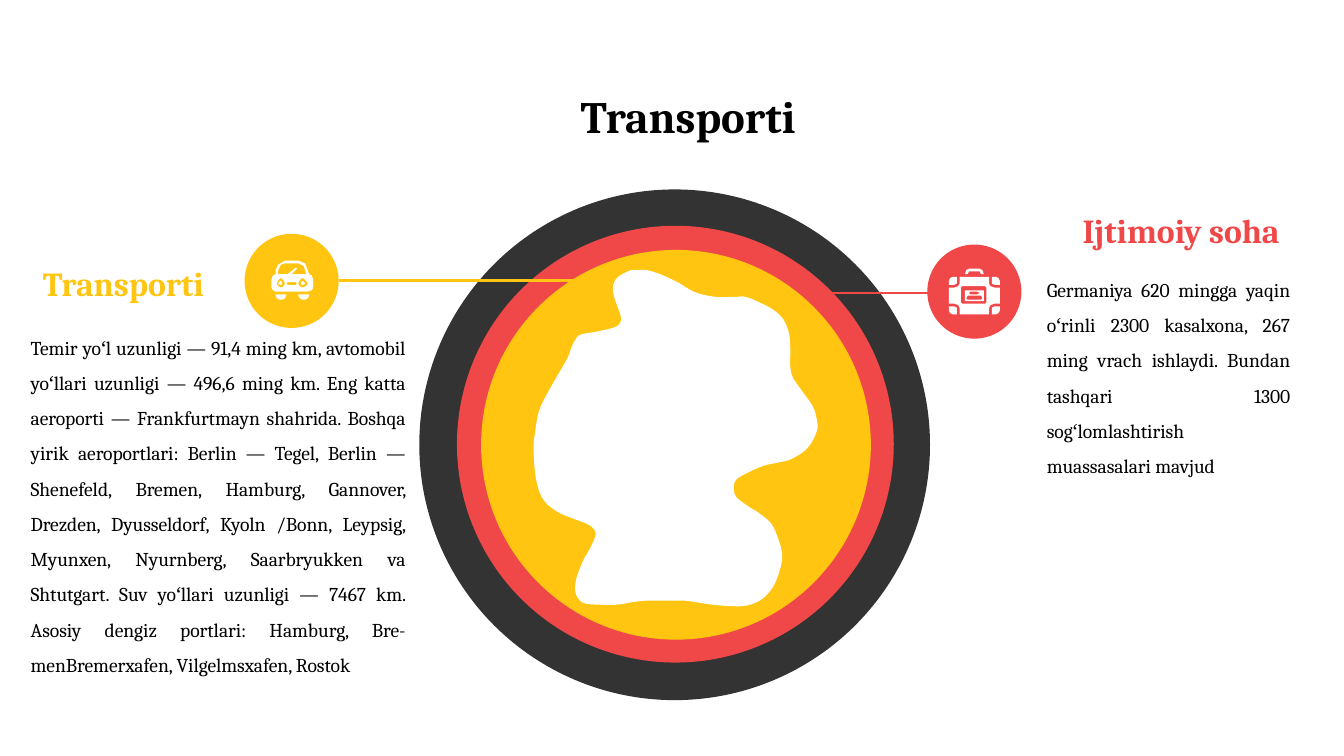
from dataclasses import dataclass

from lxml import etree
from pptx import Presentation
from pptx.dml.color import RGBColor
from pptx.enum.shapes import MSO_CONNECTOR, MSO_SHAPE
from pptx.enum.text import MSO_ANCHOR, PP_ALIGN
from pptx.oxml.ns import qn
from pptx.util import Emu, Pt

EMU_PER_PX = 9144
SLIDE_WIDTH = 1000
FONT = "Cambria"
BLACK = RGBColor(0x00, 0x00, 0x00)
WHITE = RGBColor(0xFF, 0xFF, 0xFF)
CHARCOAL = RGBColor(0x33, 0x33, 0x33)
RED = RGBColor(0xF0, 0x48, 0x48)
YELLOW = RGBColor(0xFF, 0xC5, 0x11)
ELLIPSE = MSO_SHAPE.OVAL
STRAIGHT = MSO_CONNECTOR.STRAIGHT
TOP, MIDDLE = MSO_ANCHOR.TOP, MSO_ANCHOR.MIDDLE
LEFT, CENTER = PP_ALIGN.LEFT, PP_ALIGN.CENTER
RIGHT, JUSTIFY = PP_ALIGN.RIGHT, PP_ALIGN.JUSTIFY

Point = tuple[float, float]
Contour = list[Point]


@dataclass(frozen=True)
class Disc:
    left: int
    top: int
    diameter: int
    color: RGBColor


@dataclass(frozen=True)
class Leader:
    start: int
    end: int
    y: int
    color: RGBColor


@dataclass(frozen=True)
class Label:
    text: str
    left: int
    top: int
    width: int
    height: int
    size: float
    color: RGBColor = BLACK
    bold: bool = False
    align: PP_ALIGN = JUSTIFY
    anchor: MSO_ANCHOR = TOP
    spacing: float = 1.0


DISCS = [
    Disc(312, 141, 380, CHARCOAL),
    Disc(340, 168, 325, RED),
    Disc(358, 186, 290, YELLOW),
    Disc(690, 182, 70, RED),
    Disc(182, 174, 70, YELLOW),
]
LEADERS = [Leader(610, 693, 218, RED), Leader(252, 430, 209, YELLOW)]
LABELS = [
    Label("Transporti", 62, 56, 900, 63, 24, bold=True, align=CENTER),
    Label("Germaniya 620 mingga yaqin oʻrinli 2300 kasalxona, 267 ming vrach "
          "ishlaydi. Bundan tashqari 1300 sogʻlomlashtirish muassasalari mavjud",
          769, 188, 201, 196, 10.5, spacing=1.5),
    Label("Ijtimoiy soha", 754, 156, 208, 31, 18, RED, True, RIGHT, MIDDLE),
    Label("Temir yoʻl uzunligi — 91,4 ming km, avtomobil yoʻllari uzunligi — "
          "496,6 ming km. Eng katta aeroporti — Frankfurtmayn shahrida. Boshqa "
          "yirik aeroportlari: Berlin — Tegel, Berlin — Shenefeld, Bremen, "
          "Hamburg, Gannover, Drezden, Dyusseldorf, Kyoln /Bonn, Leypsig, "
          "Myunxen, Nyurnberg, Saarbryukken va Shtutgart. Suv yoʻllari uzunligi "
          "— 7467 km. Asosiy dengiz portlari: Hamburg, Bre-menBremerxafen, "
          "Vilgelmsxafen, Rostok",
          13, 231, 299, 314, 10.5, spacing=1.5),
    Label("Transporti", 22, 195, 162, 31, 18, YELLOW, True, LEFT, MIDDLE),
]

CASE_CENTER = (725, 220)
CASE_CORNER = [(709, 206), (712, 206), (712, 211), (710, 212),
               (706, 212), (706, 209), (707, 207)]
CASE_NOTCH = [(706, 214), (710, 214), (713, 213), (714, 211), (714, 206)]
CASE_WINDOW = [(716, 213), (733, 213), (734, 214), (734, 225),
               (733, 226), (716, 226), (715, 225), (715, 214)]
CASE_TAG = [
    [(718, 216), (732, 216), (732, 224), (718, 224)],
    [(722, 217), (727, 217), (729, 218), (727, 219), (722, 219), (721, 218)],
    [(720, 220), (730, 220), (731, 222), (730, 223), (720, 223), (719, 222)],
]
CASE_HANDLE = [(721, 200), (729, 200), (731, 201), (732, 204), (730, 204),
               (729, 202), (721, 202), (720, 204), (718, 204), (719, 201)]

CAR_BODY = [(212, 194), (222, 194), (227, 196), (229, 201), (230, 204), (232, 205),
            (233, 208), (233, 214), (232, 216), (229, 217), (205, 217), (203, 216),
            (202, 214), (202, 208), (203, 205), (205, 204), (205, 201), (207, 197)]
CAR_WINDSHIELD = [(222, 196), (226, 198), (227, 201), (228, 204), (217, 204),
                  (220, 201), (221, 200), (220, 199), (219, 200), (214, 204),
                  (207, 204), (207, 201), (209, 197), (212, 196)]
CAR_GRILLE = [(214, 210), (220, 210), (221, 211), (220, 212), (214, 212), (213, 211)]
CAR_LAMP_RIMS = [[(209, 207), (212, 211), (209, 214), (206, 211)],
                 [(225, 207), (229, 211), (225, 214), (222, 211)]]
CAR_LAMPS = [[(209, 209), (210, 211), (209, 212), (207, 211)],
             [(225, 209), (227, 211), (225, 212), (224, 211)]]
CAR_WHEEL = [(205, 219), (213, 219), (213, 220), (212, 222),
             (210, 223), (208, 223), (206, 222), (205, 220)]
WHEEL_GAP = 17

COUNTRY = [
    (475, 201), (470, 201), (465, 203), (460, 206), (457, 210), (456, 215), (457, 221),
    (459, 227), (462, 236), (461, 241), (456, 244), (443, 247), (432, 249), (428, 253),
    (425, 259), (422, 267), (411, 286), (403, 301), (400, 310), (398, 323), (397, 332),
    (398, 351), (401, 365), (406, 374), (415, 381), (424, 385), (437, 390), (442, 394),
    (443, 399), (438, 410), (434, 417), (429, 430), (428, 439), (430, 445), (435, 449),
    (446, 450), (459, 450), (471, 448), (481, 447), (495, 447), (509, 447), (517, 448),
    (530, 450), (543, 451), (553, 451), (561, 449), (568, 445), (575, 437), (580, 425),
    (582, 413), (579, 401), (574, 390), (565, 382), (557, 377), (548, 370), (546, 364),
    (547, 358), (552, 354), (567, 347), (580, 344), (588, 342), (598, 336), (604, 329),
    (608, 320), (608, 314), (605, 303), (596, 290), (590, 281), (588, 273), (588, 259),
    (587, 248), (583, 238), (576, 231), (567, 226), (555, 221), (546, 221), (533, 221),
    (522, 219), (514, 216), (504, 210), (491, 204), (481, 201),
]


def px(value: float) -> Emu:
    return Emu(round(value * EMU_PER_PX))


def mirror(contour: Contour, center: Point, across: bool, down: bool) -> Contour:
    return [(2 * center[0] - x if across else x, 2 * center[1] - y if down else y)
            for x, y in contour]


def smooth(contour: Contour, steps: int = 4) -> Contour:
    curve = []
    count = len(contour)
    for index in range(count):
        before, start, end, after = (contour[(index + k) % count] for k in (-1, 0, 1, 2))
        for step in range(steps):
            t = step / steps
            curve.append(tuple(
                0.5 * (2 * b + (c - a) * t + (2 * a - 5 * b + 4 * c - d) * t ** 2
                       + (3 * b - a - 3 * c + d) * t ** 3)
                for a, b, c, d in zip(before, start, end, after)))
    return curve


def paint(shape, color: RGBColor) -> None:
    shape.shadow.inherit = False
    shape.fill.solid()
    shape.fill.fore_color.rgb = color
    shape.line.fill.background()


def draw_disc(slide, disc: Disc) -> None:
    size = px(disc.diameter)
    paint(slide.shapes.add_shape(ELLIPSE, px(disc.left), px(disc.top), size, size), disc.color)


def draw_leader(slide, leader: Leader) -> None:
    connector = slide.shapes.add_connector(
        STRAIGHT, px(leader.start), px(leader.y), px(leader.end), px(leader.y))
    connector.line.color.rgb = leader.color
    connector.line.width = Pt(1.5)
    etree.SubElement(connector._element.spPr, qn("a:effectLst"))


def draw_outline(slide, *contours: Contour) -> None:
    scaled = [[(px(x), px(y)) for x, y in contour] for contour in contours]
    builder = slide.shapes.build_freeform(*scaled[0][0], scale=1.0)
    for index, contour in enumerate(scaled):
        if index:
            builder.move_to(*contour[0])
        builder.add_line_segments(contour[1:], close=True)
    paint(builder.convert_to_shape(), WHITE)


def draw_label(slide, label: Label) -> None:
    box = slide.shapes.add_textbox(
        px(label.left), px(label.top), px(label.width), px(label.height))
    frame = box.text_frame
    frame.word_wrap = True
    frame.vertical_anchor = label.anchor
    frame.margin_left = frame.margin_right = frame.margin_top = frame.margin_bottom = px(10)
    paragraph = frame.paragraphs[0]
    paragraph.alignment = label.align
    paragraph.line_spacing = label.spacing
    run = paragraph.add_run()
    run.text = label.text
    run.font.name = FONT
    run.font.size = Pt(label.size)
    run.font.bold = label.bold
    run.font.color.rgb = label.color


def draw_suitcase(slide) -> None:
    body = []
    for across, down in ((False, False), (True, False), (True, True), (False, True)):
        draw_outline(slide, mirror(CASE_CORNER, CASE_CENTER, across, down))
        notch = mirror(CASE_NOTCH, CASE_CENTER, across, down)
        body += notch if across == down else notch[::-1]
    draw_outline(slide, body, CASE_WINDOW)
    draw_outline(slide, *CASE_TAG)
    draw_outline(slide, CASE_HANDLE)


def draw_car(slide) -> None:
    draw_outline(slide, CAR_BODY, CAR_WINDSHIELD, CAR_GRILLE, *map(smooth, CAR_LAMP_RIMS))
    for lamp in CAR_LAMPS:
        draw_outline(slide, smooth(lamp))
    for shift in (0, WHEEL_GAP):
        draw_outline(slide, [(x + shift, y) for x, y in CAR_WHEEL])


def main() -> None:
    presentation = Presentation()
    presentation.slide_width = px(SLIDE_WIDTH)
    presentation.slide_height = px(SLIDE_WIDTH * 9 / 16)
    slide = presentation.slides.add_slide(presentation.slide_layouts[6])
    for disc in DISCS:
        draw_disc(slide, disc)
    for leader in LEADERS:
        draw_leader(slide, leader)
    for label in LABELS:
        draw_label(slide, label)
    draw_suitcase(slide)
    draw_car(slide)
    draw_outline(slide, smooth(COUNTRY))
    presentation.save("out.pptx")


if __name__ == "__main__":
    main()
